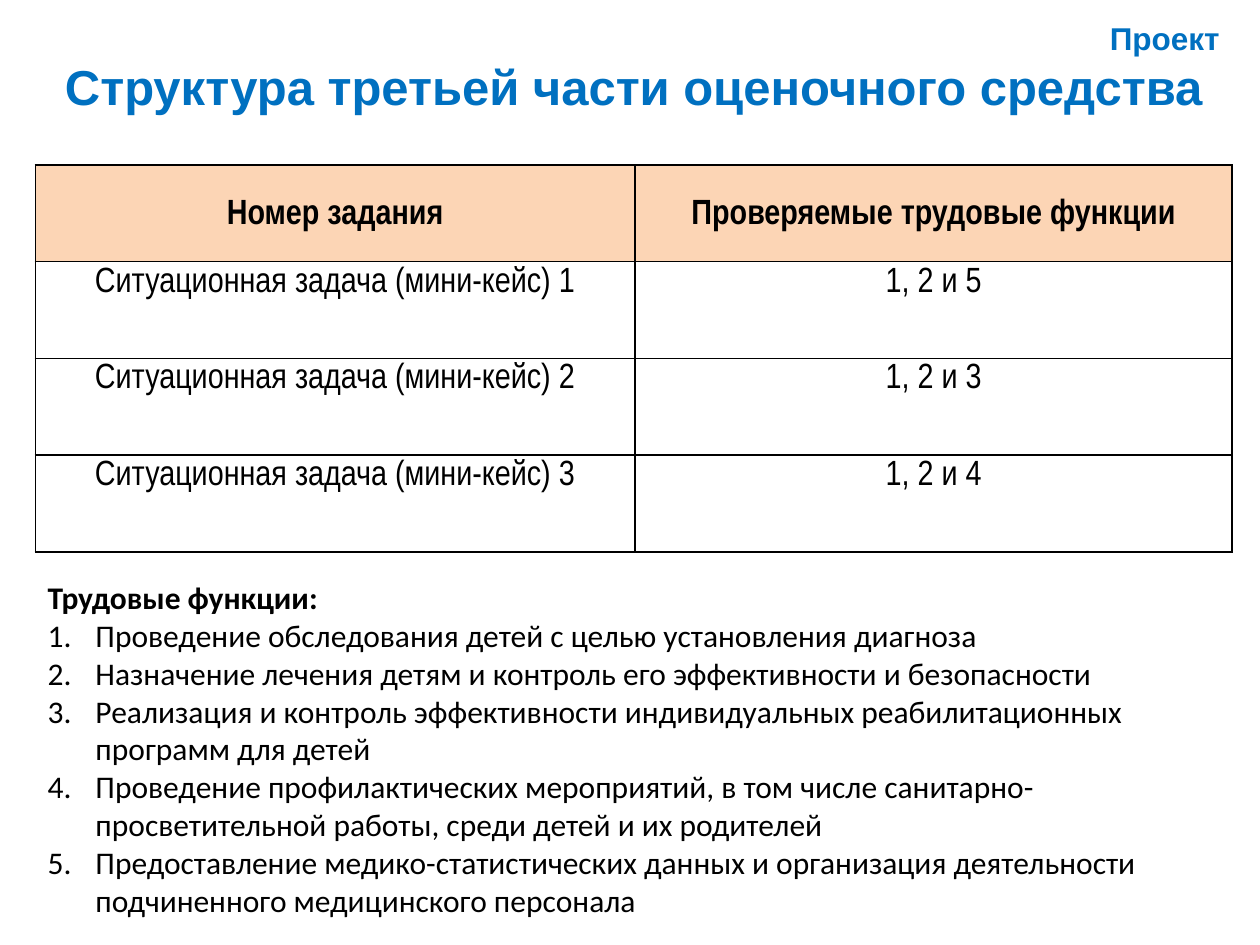
from dataclasses import dataclass

import lxml.etree
import pptx
import pptx.dml.color
import pptx.enum.text
import pptx.oxml.ns
import pptx.util

Inches = pptx.util.Inches
ALIGN = pptx.enum.text.PP_ALIGN
ANCHOR = pptx.enum.text.MSO_ANCHOR


@dataclass(frozen=True)
class Theme:
    accent: str = "0070C0"
    ink: str = "000000"
    header_fill: str = "FCD5B5"
    title_font: str = "Arial"
    table_font: str = "Arial Narrow"
    body_font: str = "Calibri"
    title_size: int = 28
    table_size: int = 20
    body_size: int = 18
    border_width: int = 1


LEFT, WIDTH = 0.28, 9.5

TASKS = [
    ("Номер задания", "Проверяемые трудовые функции"),
    ("Ситуационная задача (мини-кейс) 1", "1, 2 и 5"),
    ("Ситуационная задача (мини-кейс) 2", "1, 2 и 3"),
    ("Ситуационная задача (мини-кейс) 3", "1, 2 и 4"),
]

FUNCTIONS = [
    "Проведение обследования детей с целью установления диагноза",
    "Назначение лечения детям и контроль его эффективности и безопасности",
    "Реализация и контроль эффективности индивидуальных реабилитационных программ для детей",
    "Проведение профилактических мероприятий, в том числе санитарно-просветительной работы, "
    "среди детей и их родителей",
    "Предоставление медико-статистических данных и организация деятельности "
    "подчиненного медицинского персонала",
]


def add_xml(parent, tag, **attributes):
    return lxml.etree.SubElement(parent, pptx.oxml.ns.qn(tag), attributes)


class PageBuilder:
    def __init__(self, page, theme):
        self.page = page
        self.theme = theme

    def style(self, para, font, size, color, bold=False, align=ALIGN.LEFT):
        para.alignment = align
        para.font.name = font
        para.font.size = pptx.util.Pt(size)
        para.font.bold = bold
        para.font.color.rgb = pptx.dml.color.RGBColor.from_string(color)

    def title(self, label, heading, top, height):
        theme = self.theme
        box = self.page.shapes.title
        box.left, box.top = Inches(LEFT), Inches(top)
        box.width, box.height = Inches(WIDTH), Inches(height)
        frame = box.text_frame
        frame.vertical_anchor = ANCHOR.MIDDLE
        frame.auto_size = pptx.enum.text.MSO_AUTO_SIZE.SHAPE_TO_FIT_TEXT
        frame.text = f"{label}\n{heading}"
        lines = [(theme.body_size, ALIGN.RIGHT), (theme.title_size, ALIGN.CENTER)]
        for para, (size, align) in zip(frame.paragraphs, lines):
            self.style(para, theme.title_font, size, theme.accent, True, align)

    def table(self, rows, top, height, column_widths):
        table = self.page.shapes.add_table(
            len(rows), len(column_widths),
            Inches(LEFT), Inches(top), Inches(WIDTH), Inches(height),
        ).table
        for column, width in zip(table.columns, column_widths):
            column.width = Inches(width)
        for row_index, row in enumerate(rows):
            for column_index, text in enumerate(row):
                self.cell(table.cell(row_index, column_index), text, row_index == 0)

    def cell(self, cell, text, header):
        theme = self.theme
        cell.margin_left = cell.margin_right = Inches(0.07)
        cell.margin_top = cell.margin_bottom = 0
        cell.vertical_anchor = ANCHOR.MIDDLE if header else ANCHOR.TOP
        cell.text = text
        para = cell.text_frame.paragraphs[0]
        para.line_spacing = 1.15
        self.style(para, theme.table_font, theme.table_size, theme.ink, header, ALIGN.CENTER)
        properties = cell._tc.get_or_add_tcPr()
        for side in ("a:lnL", "a:lnR", "a:lnT", "a:lnB"):
            line = add_xml(properties, side, w=str(pptx.util.Pt(theme.border_width)))
            add_xml(add_xml(line, "a:solidFill"), "a:srgbClr", val=theme.ink)
        if header:
            cell.fill.solid()
            cell.fill.fore_color.rgb = pptx.dml.color.RGBColor.from_string(theme.header_fill)
        else:
            cell.fill.background()

    def numbered_list(self, heading, items, top, height):
        theme = self.theme
        box = self.page.shapes.add_textbox(
            Inches(LEFT), Inches(top), Inches(WIDTH), Inches(height))
        frame = box.text_frame
        frame.word_wrap = True
        frame.auto_size = pptx.enum.text.MSO_AUTO_SIZE.SHAPE_TO_FIT_TEXT
        frame.text = "\n".join([heading, *items])
        for index, para in enumerate(frame.paragraphs):
            self.style(para, theme.body_font, theme.body_size, theme.ink, index == 0)
            if index:
                self.number(para)

    def number(self, para):
        properties = para._p.get_or_add_pPr()
        indent = Inches(0.38)
        properties.set("marL", str(indent))
        properties.set("indent", str(-indent))
        bullet = add_xml(properties, "a:buAutoNum", type="arabicPeriod")
        properties.insert(0, bullet)


def main():
    deck = pptx.Presentation()
    deck.slide_width, deck.slide_height = Inches(10), Inches(7.5)
    builder = PageBuilder(deck.slides.add_slide(deck.slide_layouts[5]), Theme())
    builder.title("Проект", "Структура третьей части оценочного средства", 0.08, 0.91)
    builder.table(TASKS, 1.31, 3.07, (4.76, 4.74))
    builder.numbered_list("Трудовые функции:", FUNCTIONS, 4.54, 2.83)
    deck.save("out.pptx")


if __name__ == "__main__":
    main()
